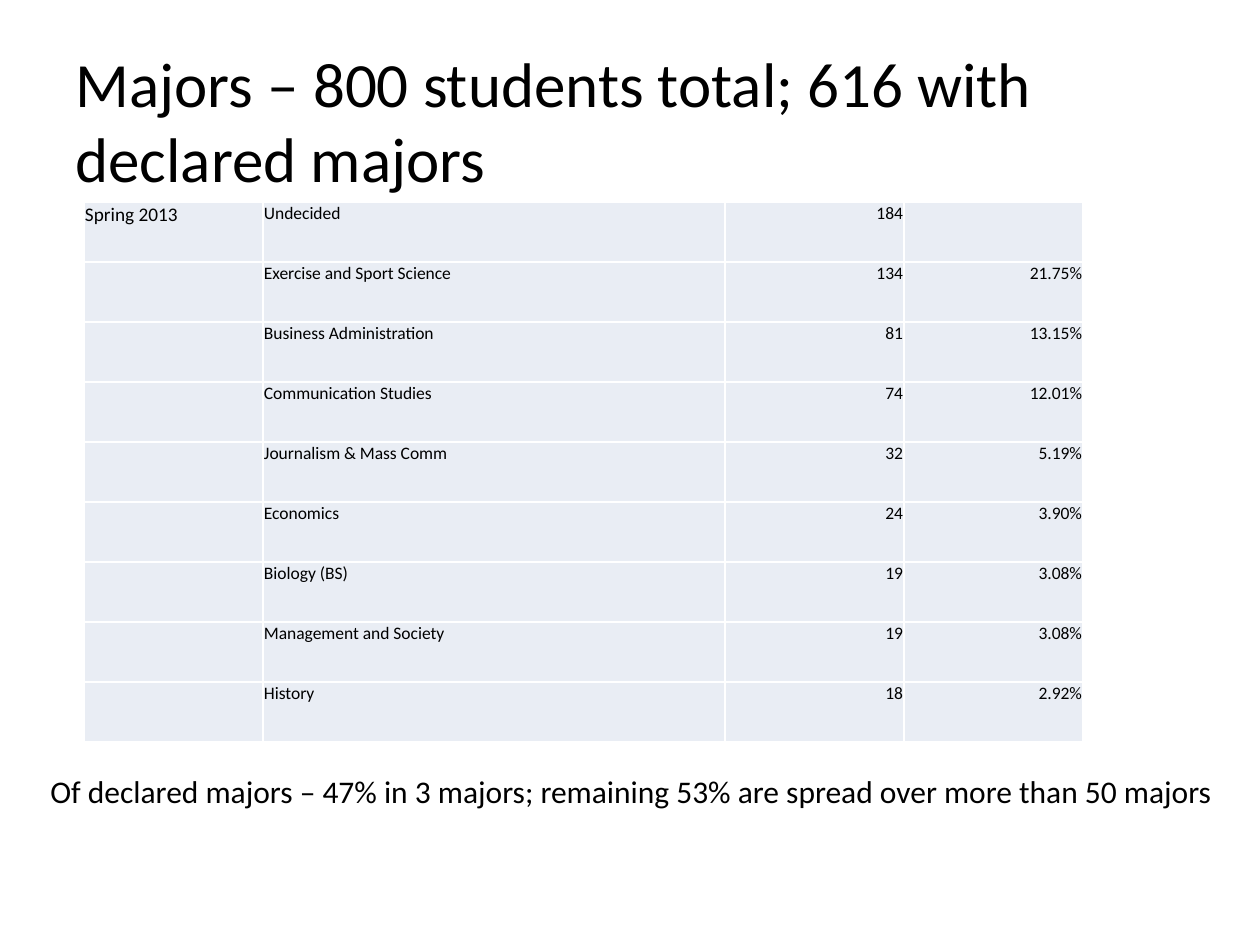
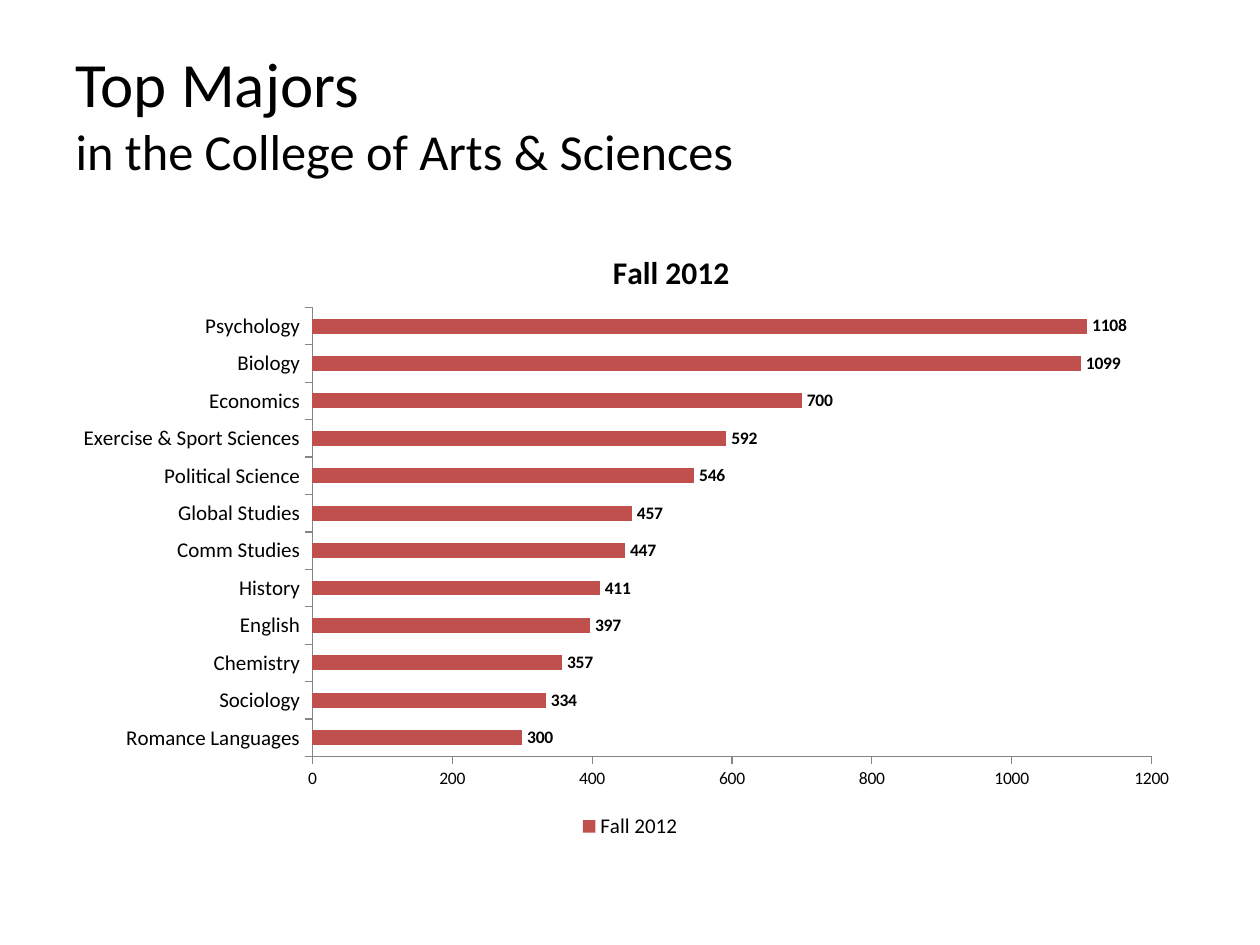
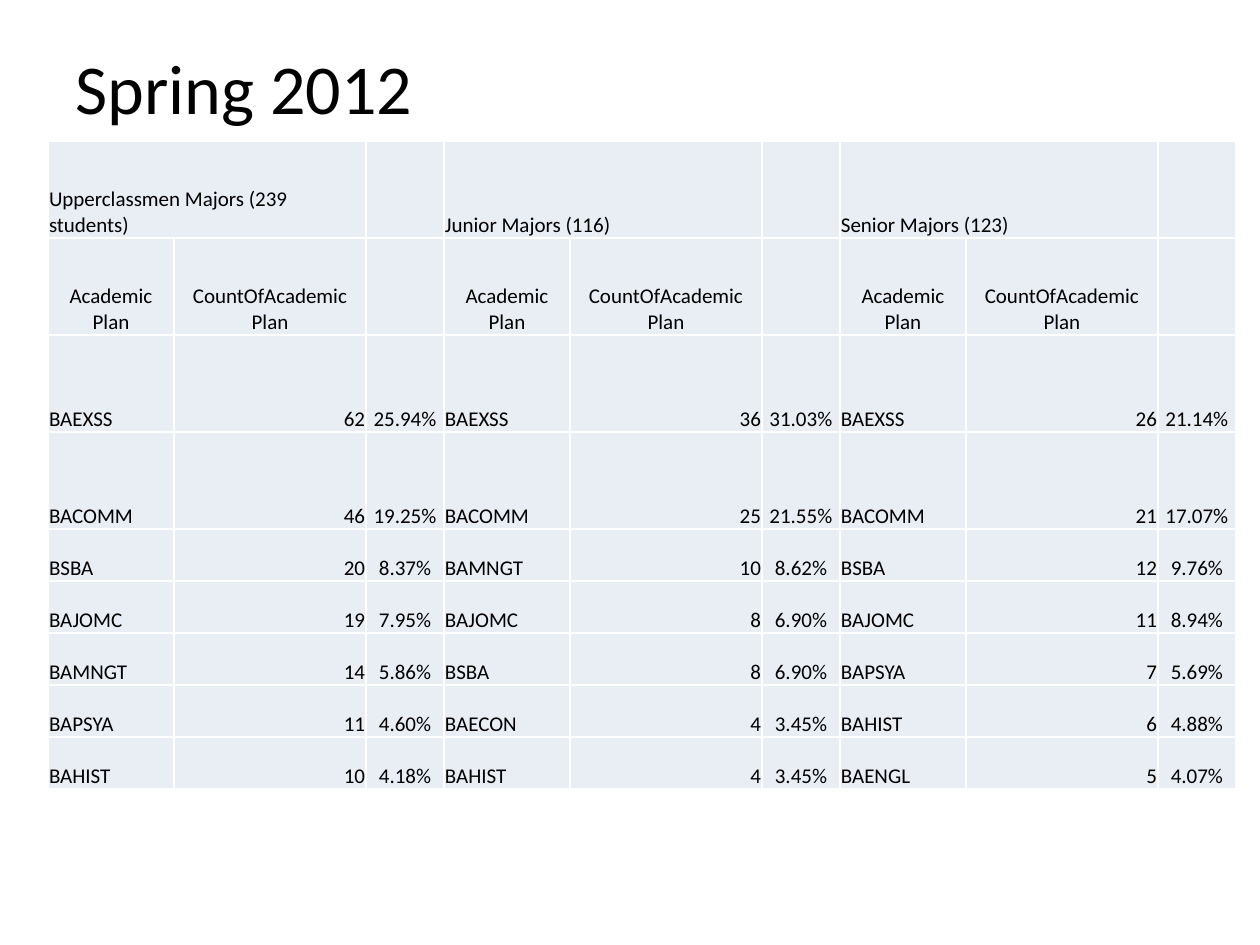
import pptx
import pptx.chart.data
import pptx.dml.color
import pptx.enum.chart
import pptx.enum.text
import pptx.oxml.ns
import pptx.util
from lxml import etree

EMU_PER_PX = 914400 / 126
FONT = "Calibri"
INK = "000000"
WHITE = "FFFFFF"
CELL_FILL = "E9EDF4"
BAR_RED = "C0504D"
AXIS_GRAY = "868686"
TITLE_BOX = (63, 38, 1134, 157)

ALIGN = pptx.enum.text.PP_ALIGN
ANCHOR = pptx.enum.text.MSO_ANCHOR
qn = pptx.oxml.ns.qn

DECLARED = [
    ("Spring 2013", "Undecided", "184", ""),
    ("", "Exercise and Sport Science", "134", "21.75%"),
    ("", "Business Administration", "81", "13.15%"),
    ("", "Communication Studies", "74", "12.01%"),
    ("", "Journalism & Mass Comm", "32", "5.19%"),
    ("", "Economics", "24", "3.90%"),
    ("", "Biology (BS)", "19", "3.08%"),
    ("", "Management and Society", "19", "3.08%"),
    ("", "History", "18", "2.92%"),
]

TOP_MAJORS = {
    "Romance Languages": 300,
    "Sociology": 334,
    "Chemistry": 357,
    "English": 397,
    "History": 411,
    "Comm Studies": 447,
    "Global Studies": 457,
    "Political Science": 546,
    "Exercise & Sport Sciences": 592,
    "Economics": 700,
    "Biology": 1099,
    "Psychology": 1108,
}

COHORTS = ["Upperclassmen Majors (239 students)", "Junior Majors (116)", "Senior Majors (123)"]
PLAN_HEADINGS = ("Academic Plan", "CountOfAcademic Plan", "")
PLAN_ROWS = [
    ("BAEXSS", "62", "25.94%", "BAEXSS", "36", "31.03%", "BAEXSS", "26", "21.14%"),
    ("BACOMM", "46", "19.25%", "BACOMM", "25", "21.55%", "BACOMM", "21", "17.07%"),
    ("BSBA", "20", "8.37%", "BAMNGT", "10", "8.62%", "BSBA", "12", "9.76%"),
    ("BAJOMC", "19", "7.95%", "BAJOMC", "8", "6.90%", "BAJOMC", "11", "8.94%"),
    ("BAMNGT", "14", "5.86%", "BSBA", "8", "6.90%", "BAPSYA", "7", "5.69%"),
    ("BAPSYA", "11", "4.60%", "BAECON", "4", "3.45%", "BAHIST", "6", "4.88%"),
    ("BAHIST", "10", "4.18%", "BAHIST", "4", "3.45%", "BAENGL", "5", "4.07%"),
]


def px(length):
    return pptx.util.Emu(round(length * EMU_PER_PX))


def color(value):
    return pptx.dml.color.RGBColor.from_string(value)


def style(font, size, bold=False):
    font.name = FONT
    font.size = pptx.util.Pt(size)
    font.bold = bold
    font.color.rgb = color(INK)


def write(frame, text, size=18, align=ALIGN.LEFT, bold=False, second_size=None):
    paragraph = frame.paragraphs[0]
    paragraph.alignment = align
    for number, line in enumerate(text.split("\n")):
        if number:
            paragraph.add_line_break()
            line_break = paragraph._p.find(qn("a:br"))
            etree.SubElement(line_break, qn("a:rPr"), sz=str(size * 100))
        run = paragraph.add_run()
        run.text = line
        style(run.font, second_size if number else size, bold)


def add_titled_slide(deck, heading, size=36, second_size=None):
    slide = deck.slides.add_slide(deck.slide_layouts[5])
    title = slide.shapes.title
    title.left, title.top, title.width, title.height = map(px, TITLE_BOX)
    frame = title.text_frame
    frame.auto_size = pptx.enum.text.MSO_AUTO_SIZE.NONE
    frame.vertical_anchor = ANCHOR.TOP
    write(frame, heading, size=size, second_size=second_size)
    return slide


def format_cell(cell, anchor):
    cell.margin_left = cell.margin_right = cell.margin_top = px(1)
    cell.margin_bottom = 0
    cell.vertical_anchor = anchor
    properties = cell._tc.get_or_add_tcPr()
    for side in ("a:lnL", "a:lnR", "a:lnT", "a:lnB"):
        border = etree.SubElement(properties, qn(side), w="12700")
        paint = etree.SubElement(border, qn("a:solidFill"))
        etree.SubElement(paint, qn("a:srgbClr"), val=WHITE)
    cell.fill.solid()
    cell.fill.fore_color.rgb = color(CELL_FILL)


def add_grid(slide, left, top, widths, heights, anchor):
    table = slide.shapes.add_table(
        len(heights), len(widths), px(left), px(top), px(sum(widths)), px(sum(heights))
    ).table
    for column, width in zip(table.columns, widths):
        column.width = px(width)
    for row, height in zip(table.rows, heights):
        row.height = px(height)
    for cell in table.iter_cells():
        format_cell(cell, anchor)
    return table


def fill_row(table, row, texts, aligns, sizes):
    for column, text in enumerate(texts):
        if text:
            write(table.cell(row, column).text_frame, text,
                  size=sizes[column], align=aligns[column])


def add_declared_table(slide, left, top):
    aligns = (ALIGN.LEFT, ALIGN.LEFT, ALIGN.RIGHT, ALIGN.RIGHT)
    table = add_grid(slide, left, top, [179, 462, 179, 179], [60] * len(DECLARED), ANCHOR.TOP)
    for row, texts in enumerate(DECLARED):
        fill_row(table, row, texts, aligns, (11, 10, 10, 10))


def add_caption(slide, left, top, width, height, text):
    caption = slide.shapes.add_textbox(px(left), px(top), px(width), px(height))
    caption.text_frame.word_wrap = False
    caption.text_frame.auto_size = pptx.enum.text.MSO_AUTO_SIZE.SHAPE_TO_FIT_TEXT
    write(caption.text_frame, text)


def add_plan_table(slide, left, top):
    cohorts = len(COHORTS)
    sizes = [12] * 3 * cohorts
    table = add_grid(slide, left, top, [126, 192, 78] * cohorts,
                     [97] * 4 + [52] * 5, ANCHOR.BOTTOM)
    for number, cohort in enumerate(COHORTS):
        heading = table.cell(0, 3 * number)
        heading.merge(table.cell(0, 3 * number + 1))
        write(heading.text_frame, cohort, size=12)
    fill_row(table, 1, PLAN_HEADINGS * cohorts, [ALIGN.CENTER] * 3 * cohorts, sizes)
    for row, texts in enumerate(PLAN_ROWS, start=2):
        fill_row(table, row, texts, [ALIGN.LEFT, ALIGN.RIGHT, ALIGN.CENTER] * cohorts, sizes)


def place_in_chart(element, index, inner=False, **shares):
    existing = element.find(qn("c:layout"))
    if existing is not None:
        element.remove(existing)
    layout = etree.Element(qn("c:layout"))
    manual = etree.SubElement(layout, qn("c:manualLayout"))
    if inner:
        etree.SubElement(manual, qn("c:layoutTarget"), val="inner")
    for mode in ("c:xMode", "c:yMode"):
        etree.SubElement(manual, qn(mode), val="edge")
    for name, share in shares.items():
        etree.SubElement(manual, qn("c:" + name), val=str(share))
    element.insert(index, layout)


def format_axis(axis, size):
    axis.has_major_gridlines = False
    axis.major_tick_mark = pptx.enum.chart.XL_TICK_MARK.OUTSIDE
    axis.minor_tick_mark = pptx.enum.chart.XL_TICK_MARK.NONE
    axis.format.line.color.rgb = color(AXIS_GRAY)
    style(axis.tick_labels.font, size)


def add_majors_chart(slide, left, top, width, height):
    majors = pptx.chart.data.CategoryChartData()
    majors.categories = list(TOP_MAJORS)
    majors.add_series("Fall 2012", list(TOP_MAJORS.values()))
    chart = slide.shapes.add_chart(
        pptx.enum.chart.XL_CHART_TYPE.BAR_CLUSTERED,
        px(left), px(top), px(width), px(height), majors,
    ).chart
    style(chart.font, 10)
    chart.has_title = True
    write(chart.chart_title.text_frame, "Fall 2012", bold=True, align=ALIGN.CENTER)
    place_in_chart(chart.chart_title._element, 1, x=0.48, y=0.04)
    place_in_chart(chart._chartSpace.chart.plotArea, 0, inner=True, x=0.22, y=0.14, w=0.74, h=0.72)

    format_axis(chart.category_axis, 12)
    format_axis(chart.value_axis, 10)
    chart.value_axis.minimum_scale = 0
    chart.value_axis.maximum_scale = 1200
    chart.value_axis.major_unit = 200

    plot = chart.plots[0]
    plot.gap_width = 150
    plot.vary_by_categories = False
    enrollment = plot.series[0]
    enrollment.format.fill.solid()
    enrollment.format.fill.fore_color.rgb = color(BAR_RED)
    labels = enrollment.data_labels
    labels.show_value = True
    labels.position = pptx.enum.chart.XL_LABEL_POSITION.OUTSIDE_END
    style(labels.font, 10, bold=True)

    chart.has_legend = True
    chart.legend.position = pptx.enum.chart.XL_LEGEND_POSITION.BOTTOM
    chart.legend.include_in_layout = False
    style(chart.legend.font, 12)


def main():
    deck = pptx.Presentation()
    deck.slide_width, deck.slide_height = px(1260), px(945)

    declared = add_titled_slide(deck, "Majors – 800 students total; 616 with declared majors")
    add_declared_table(declared, 84, 202)
    add_caption(declared, 38, 766, 1201, 50,
                "Of declared majors – 47% in 3 majors; remaining 53% are spread over more than 50 majors")

    top_majors = add_titled_slide(
        deck, "Top Majors\nin the College of Arts & Sciences", second_size=28.8)
    add_majors_chart(top_majors, 63, 220, 1134, 624)

    spring = add_titled_slide(deck, "Spring 2012", size=40)
    add_plan_table(spring, 48, 141)

    deck.save("out.pptx")


if __name__ == "__main__":
    main()
